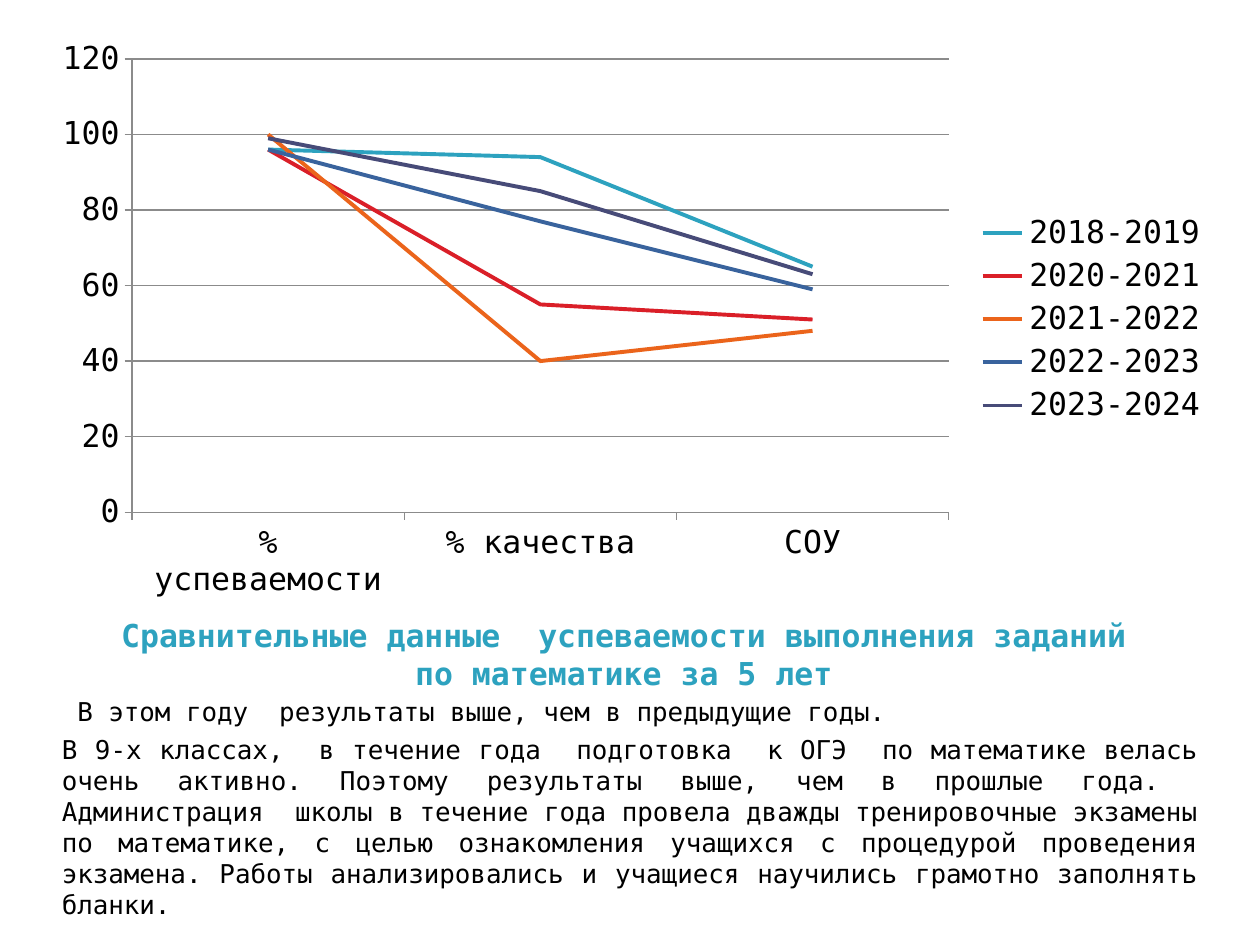
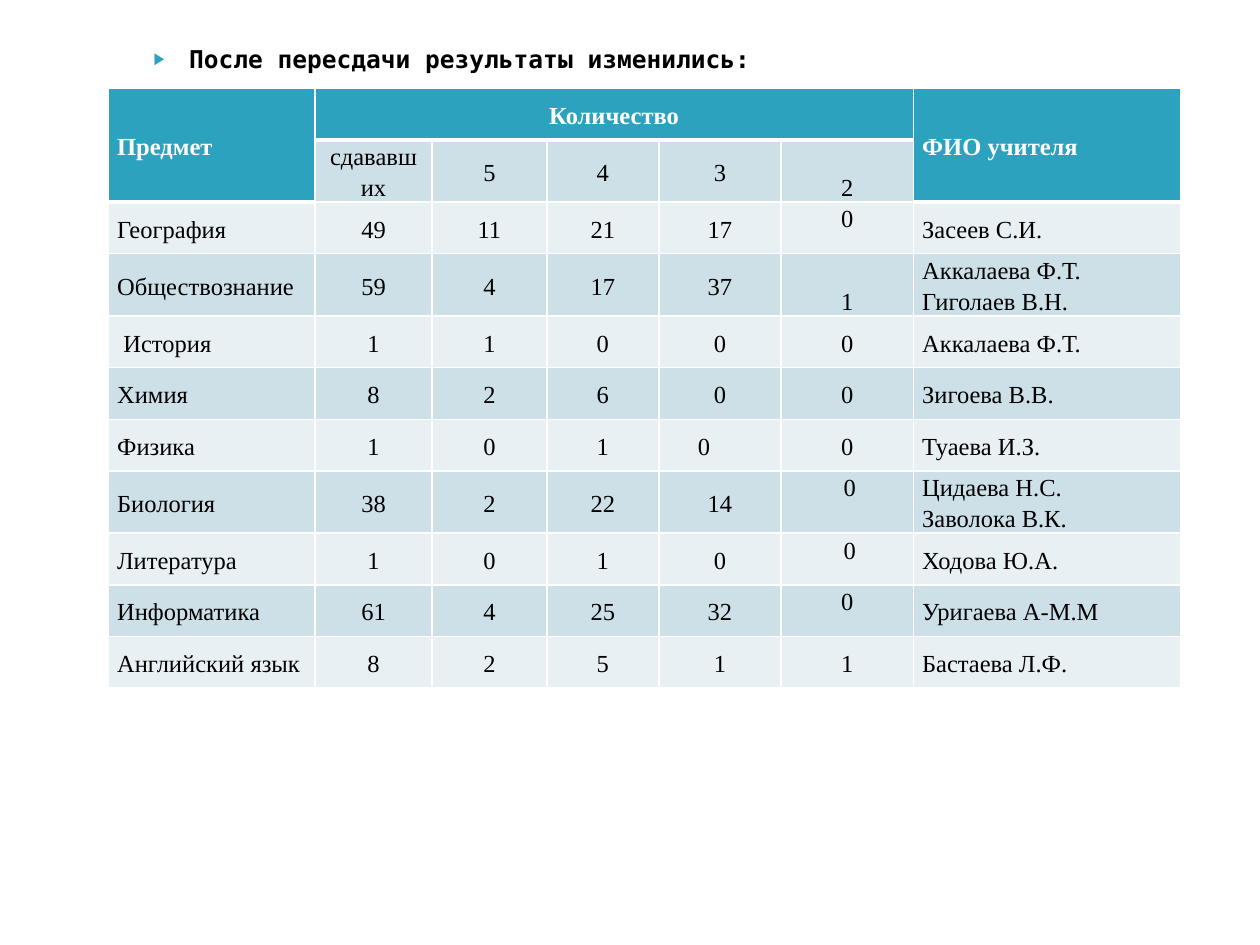
from lxml.etree import SubElement
from pptx import Presentation
from pptx.chart.data import CategoryChartData
from pptx.dml.color import RGBColor
from pptx.enum.chart import XL_CHART_TYPE as ChartType, XL_LEGEND_POSITION as LegendPos, XL_TICK_MARK as Tick
from pptx.enum.text import MSO_ANCHOR as Anchor, MSO_AUTO_SIZE as AutoSize, PP_ALIGN as Align
from pptx.oxml.ns import qn
from pptx.util import Inches, Pt

MONO = "DejaVu Sans Mono"
SERIF = "Times New Roman"
COLORS = {
    "accent": "2DA2BF",
    "text": "000000",
    "white": "FFFFFF",
    "grid": "8B8B8B",
    "band_dark": "CDE0E8",
    "band_light": "E8F0F4",
}


def add_text(paragraph, text, size, color="text", bold=False, font=MONO):
    run = paragraph.add_run()
    run.text = text
    run.font.name = font
    run.font.size = Pt(size)
    run.font.bold = bold
    run.font.color.rgb = RGBColor.from_string(COLORS[color])


def place(holder, left, top, width, height):
    """Move a placeholder and give it plain, top-anchored text; return its frame."""
    holder.left, holder.top = Inches(left), Inches(top)
    holder.width, holder.height = Inches(width), Inches(height)
    frame = holder.text_frame
    frame.word_wrap = True
    frame.auto_size = AutoSize.NONE
    frame.vertical_anchor = Anchor.TOP
    return frame


prs = Presentation()
prs.slide_width, prs.slide_height = Inches(10), Inches(7.5)
layout = prs.slide_layouts[1]

# Slide 1: five years of mathematics results
slide = prs.slides.add_slide(layout)
heading = place(slide.shapes.title, 0.86, 4.84, 8.18, 0.5).paragraphs[0]
heading.alignment = Align.CENTER
add_text(heading, "Сравнительные данные  успеваемости выполнения заданий по математике за 5 лет",
         18, "accent", True)

comments = [
    (" В этом году  результаты выше, чем в предыдущие годы.", Align.LEFT),
    ("В 9-х классах,  в течение года  подготовка  к ОГЭ  по математике велась очень активно. "
     "Поэтому результаты выше, чем в прошлые года.  Администрация  школы в течение года провела "
     "дважды тренировочные экзамены по математике, с целью ознакомления учащихся с процедурой "
     "проведения экзамена. Работы анализировались и учащиеся научились грамотно заполнять бланки.",
     Align.JUSTIFY),
]
commentary = place(slide.placeholders[1], 0.39, 5.47, 9.22, 1.64)
for index, (comment, alignment) in enumerate(comments):
    paragraph = commentary.add_paragraph() if index else commentary.paragraphs[0]
    paragraph.alignment = alignment
    paragraph.space_before = Pt(4 if index else 0)
    props = paragraph._p.get_or_add_pPr()
    props.set("marL", "0")
    props.set("indent", "0")
    SubElement(props, qn("a:buNone"))
    add_text(paragraph, comment, 14.8)

school_years = [
    ("2018-2019", (96, 94, 65), "2DA2BF"),
    ("2020-2021", (96, 55, 51), "DA1F28"),
    ("2021-2022", (100, 40, 48), "EB641B"),
    ("2022-2023", (96, 77, 59), "39639D"),
    ("2023-2024", (99, 85, 63), "474B78"),
]
results = CategoryChartData()
results.categories = ["% успеваемости", "% качества", "СОУ"]
for year, values, _ in school_years:
    results.add_series(year, values)
chart = slide.shapes.add_chart(ChartType.LINE, Inches(0.31), Inches(0.23),
                               Inches(9.38), Inches(4.61), results).chart
chart.has_title = False
chart.font.name = MONO
chart.font.size = Pt(18)
chart.font.color.rgb = RGBColor.from_string(COLORS["text"])
chart.has_legend = True
chart.legend.position = LegendPos.RIGHT
chart.legend.include_in_layout = False
chart.plots[0].vary_by_categories = False
for series, (_, _, color) in zip(chart.plots[0].series, school_years):
    series.smooth = False
    series.format.line.width = Pt(2.25)
    series.format.line.color.rgb = RGBColor.from_string(color)

percent_axis = chart.value_axis
percent_axis.minimum_scale, percent_axis.maximum_scale = 0, 120
percent_axis.major_unit = 20
percent_axis.has_major_gridlines = True
for axis in (percent_axis, chart.category_axis):
    axis.major_tick_mark = Tick.OUTSIDE
for line in (percent_axis.format.line, chart.category_axis.format.line,
             percent_axis.major_gridlines.format.line):
    line.width = Pt(0.75)
    line.color.rgb = RGBColor.from_string(COLORS["grid"])

# Slide 2: results after the retake
slide = prs.slides.add_slide(layout)
unused_title = slide.shapes.title._element
unused_title.getparent().remove(unused_title)
lead = place(slide.placeholders[1], 1, 0.3, 8.18, 5).paragraphs[0]
lead.space_before = Pt(0)
props = lead._p.get_or_add_pPr()
props.set("marL", str(Inches(0.4)))
props.set("indent", str(Inches(-0.28)))
SubElement(SubElement(props, qn("a:buClr")), qn("a:srgbClr"), val=COLORS["accent"])
SubElement(props, qn("a:buSzPct"), val="68000")
SubElement(props, qn("a:buChar"), char="▶")
add_text(lead, "После пересдачи результаты изменились:", 14, bold=True)

subjects = [
    ["Предмет", "Количество", "", "", "", "", "ФИО учителя"],
    ["", "сдававших", "5", "4", "3", "2", ""],
    ["География", "49", "11", "21", "17", "0", "Засеев С.И."],
    ["Обществознание", "59", "4", "17", "37", "1", "Аккалаева Ф.Т.\nГиголаев В.Н."],
    ["История", "1", "1", "0", "0", "0", "Аккалаева Ф.Т."],
    ["Химия", "8", "2", "6", "0", "0", "Зигоева В.В."],
    ["Физика", "1", "0", "1", "0", "0", "Туаева И.З."],
    ["Биология", "38", "2", "22", "14", "0", "Цидаева Н.С.\nЗаволока В.К."],
    ["Литература", "1", "0", "1", "0", "0", "Ходова Ю.А."],
    ["Информатика", "61", "4", "25", "32", "0", "Уригаева А-М.М"],
    ["Английский язык", "8", "2", "5", "1", "1", "Бастаева Л.Ф."],
]
column_widths = [1.64, 0.93, 0.91, 0.89, 0.97, 1.05, 2.12]
SUBJECT, GRADE_3, GRADE_2, TEACHER = 0, 4, 5, 6
top_rows, bottom_rows = (2, 7, 8, 9), (1, 3)
indents = {(4, SUBJECT): 0.05, (6, GRADE_3): 0.24, (7, GRADE_2): 0.04, (8, GRADE_2): 0.04}

table = slide.shapes.add_table(len(subjects), len(column_widths), Inches(0.86), Inches(0.7),
                               Inches(8.52), Inches(4.85)).table
for column, width in zip(table.columns, column_widths):
    column.width = Inches(width)

for r, subject in enumerate(subjects):
    table.rows[r].height = Inches(0.41)
    for c, text in enumerate(subject):
        cell = table.cell(r, c)
        outer = c in (SUBJECT, TEACHER)
        header = r == 0 or (r == 1 and outer)
        header_end = 1 if outer else 0
        cell.margin_left = cell.margin_right = Inches(0.07)
        cell.margin_top = cell.margin_bottom = 0
        cell.vertical_anchor = Anchor.MIDDLE
        if c == GRADE_2 and r in top_rows:
            cell.vertical_anchor = Anchor.TOP
        elif c == GRADE_2 and r in bottom_rows:
            cell.vertical_anchor = Anchor.BOTTOM

        edges = {"lnL": 1, "lnR": 1, "lnT": 3 if r == header_end + 1 else 1,
                 "lnB": 3 if r == header_end else 1}
        for edge, points in edges.items():
            border = SubElement(cell._tc.get_or_add_tcPr(), qn(f"a:{edge}"), w=str(Pt(points)))
            SubElement(SubElement(border, qn("a:solidFill")), qn("a:srgbClr"), val=COLORS["white"])
        band = "accent" if header else "band_dark" if r % 2 else "band_light"
        cell.fill.solid()
        cell.fill.fore_color.rgb = RGBColor.from_string(COLORS[band])

        for index, entry in enumerate(text.split("\n") if text else []):
            frame = cell.text_frame
            paragraph = frame.add_paragraph() if index else frame.paragraphs[0]
            left_aligned = outer or (r, c) == (6, GRADE_3)
            paragraph.alignment = Align.LEFT if left_aligned else Align.CENTER
            paragraph.line_spacing = 1.15
            if (r, c) in indents:
                paragraph._p.get_or_add_pPr().set("marL", str(Inches(indents[r, c])))
            add_text(paragraph, entry, 14, "white" if header else "text", header, SERIF)

table.cell(0, 1).merge(table.cell(0, GRADE_2))
for c in (SUBJECT, TEACHER):
    table.cell(0, c).merge(table.cell(1, c))

prs.save("out.pptx")
